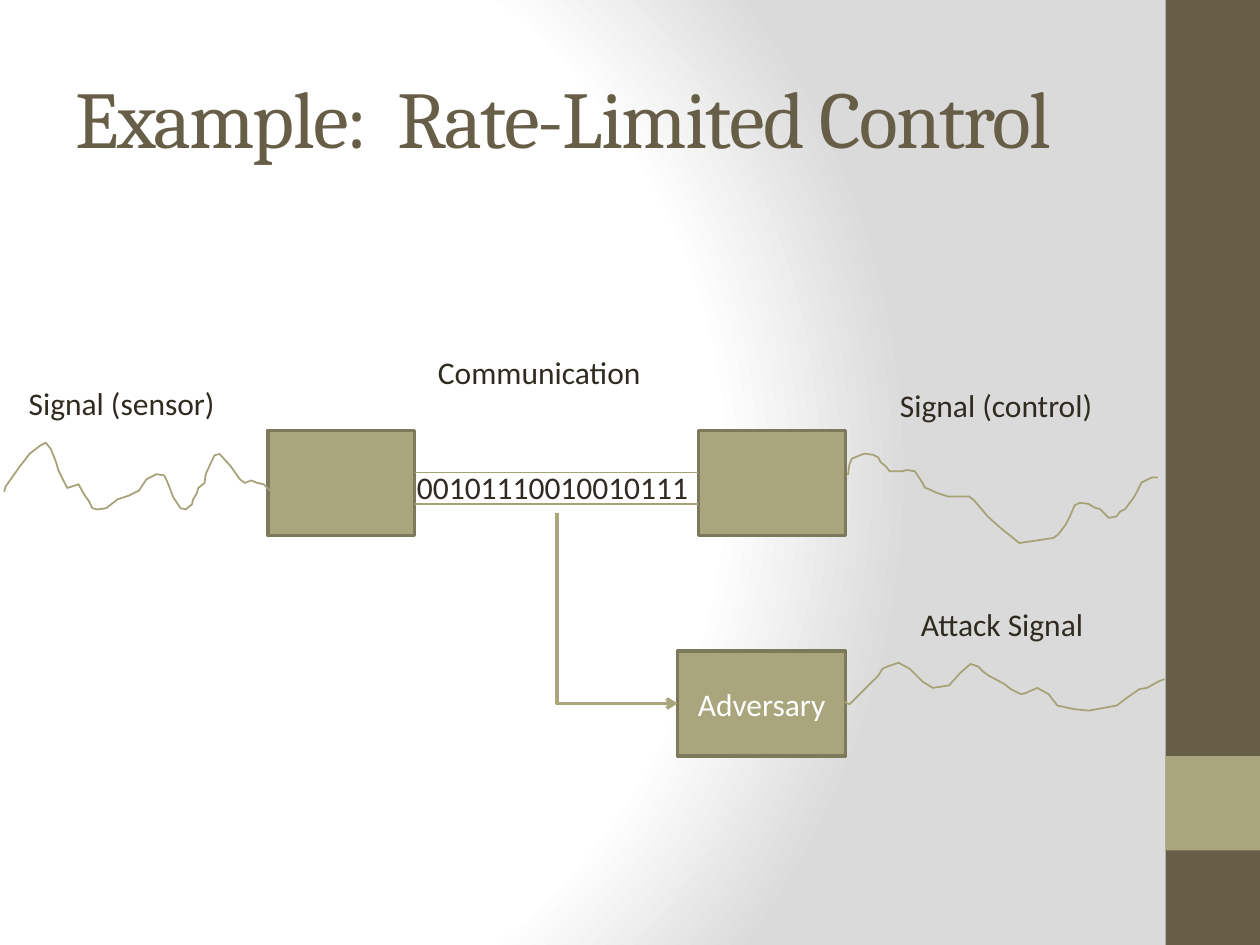
from typing import NamedTuple

from lxml import etree
from pptx import Presentation
from pptx.dml.color import RGBColor
from pptx.enum import shapes, text
from pptx.oxml import ns, parse_xml
from pptx.util import Pt

COLORS = {
    "bar": "675E47", "accent": "A9A57C", "edge": "7D7A5C", "wave": "A6A278",
    "ink": "2F2B20", "white": "FFFFFF", "gray": "DADADA",
}
SENSOR_WAVE = [
    (0, 39), (1, 35), (13, 18), (17, 13), (20, 9), (29, 2), (33, 0), (37, 5),
    (39, 10), (41, 15), (43, 22), (46, 28), (50, 36), (59, 33), (64, 42),
    (67, 46), (70, 52), (74, 53), (81, 52), (86, 48), (90, 45), (99, 42),
    (103, 40), (107, 38), (113, 29), (121, 25), (127, 26), (129, 30),
    (131, 35), (134, 43), (140, 52), (144, 53), (149, 49), (150, 45),
    (153, 40), (154, 36), (159, 32), (160, 25), (164, 16), (167, 10),
    (171, 9), (180, 19), (187, 29), (191, 32), (196, 30), (201, 32),
    (206, 33), (211, 38),
]
CONTROL_WAVE = [
    (0, 17), (1, 9), (3, 4), (13, 0), (20, 1), (24, 3), (26, 7), (30, 10),
    (33, 14), (43, 14), (47, 13), (53, 14), (59, 23), (61, 27), (66, 29),
    (70, 31), (79, 34), (96, 34), (100, 37), (111, 50), (121, 59), (136, 71),
    (163, 67), (167, 64), (173, 56), (176, 50), (180, 41), (184, 39),
    (191, 40), (196, 43), (200, 44), (207, 51), (213, 50), (216, 46),
    (220, 44), (226, 36), (229, 31), (233, 23), (241, 19), (246, 19),
]
ATTACK_WAVE = [
    (0, 31), (4, 33), (23, 14), (27, 10), (30, 5), (34, 3), (43, 0), (52, 5),
    (57, 10), (62, 15), (70, 20), (83, 18), (92, 8), (100, 1), (106, 3),
    (110, 7), (114, 10), (127, 17), (132, 21), (140, 25), (144, 24),
    (153, 20), (162, 25), (169, 34), (183, 37), (194, 38), (216, 34),
    (224, 28), (234, 21), (240, 20), (249, 15), (254, 13),
]
WAVE_UNIT = 0.72


class Box(NamedTuple):
    left: float
    top: float
    width: float
    height: float

    def inner(self, left, top, width, height):
        return Box(self.left + left, self.top + top, width, height)


def color(name):
    return RGBColor.from_string(COLORS[name])


def style_line(line, name, width):
    line.color.rgb = color(name)
    line.width = Pt(width)


def write(shape, words, size, font, name):
    para = shape.text_frame.paragraphs[0]
    para.text = words
    span = para.runs[0]
    span.font.size = Pt(size)
    span.font.name = font
    span.font.color.rgb = color(name)
    return span


def add_block(page, box, fill, edge=None):
    block = page.shapes.add_shape(shapes.MSO_SHAPE.RECTANGLE, *map(Pt, box))
    block.shadow.inherit = False
    block.fill.solid()
    block.fill.fore_color.rgb = color(fill)
    if edge:
        style_line(block.line, edge, 2)
    else:
        block.line.fill.background()
    return block


def add_label(page, box, words):
    label = page.shapes.add_textbox(*map(Pt, box))
    label.text_frame.word_wrap = False
    label.text_frame.auto_size = text.MSO_AUTO_SIZE.SHAPE_TO_FIT_TEXT
    write(label, words, 18, "Calibri", "ink")


def add_line(page, kind, start, end, name, width):
    line = page.shapes.add_connector(kind, *map(Pt, (*start, *end)))
    style_line(line.line, name, width)
    etree.SubElement(line._element.spPr, ns.qn("a:effectLst"))
    return line


def draw_wave(page, box, points):
    start, *rest = points
    builder = page.shapes.build_freeform(*start, scale=Pt(WAVE_UNIT))
    builder.add_line_segments(rest, close=False)
    wave = builder.convert_to_shape(Pt(box.left), Pt(box.top))
    wave.shadow.inherit = False
    wave.fill.background()
    style_line(wave.line, "wave", 1)


def draw_tap(page, box):
    tap = add_line(page, shapes.MSO_CONNECTOR.ELBOW, (box.left, box.top),
                   (box.left + box.width, box.top + box.height), "accent", 2)
    tap.left = Pt(box.left + (box.width - box.height) / 2)
    tap.top = Pt(box.top + (box.height - box.width) / 2)
    tap.width, tap.height = Pt(box.height), Pt(box.width)
    properties = tap._element.spPr
    frame = properties.find(ns.qn("a:xfrm"))
    frame.set("rot", "16200000")
    frame.set("flipH", "1")
    properties.find(ns.qn("a:prstGeom")).set("prst", "bentConnector2")
    outline = properties.find(ns.qn("a:ln"))
    etree.SubElement(outline, ns.qn("a:tailEnd"), type="arrow")


def draw_background(page):
    page.background.fill.solid()
    properties = page.background._cSld.bg.bgPr
    stops = "".join(
        f'<a:gs pos="{place}"><a:srgbClr val="{COLORS[name]}"/></a:gs>'
        for place, name in ((0, "white"), (75000, "white"), (100000, "gray")))
    gradient = parse_xml(
        f'<a:gradFill {ns.nsdecls("a")} rotWithShape="1"><a:gsLst>{stops}</a:gsLst>'
        '<a:path path="circle"><a:fillToRect l="20000" t="50000" r="100000" '
        'b="50000"/></a:path></a:gradFill>')
    properties.replace(properties.find(ns.qn("a:solidFill")), gradient)


def draw_sidebar(page, box):
    add_block(page, box, "bar")
    add_block(page, box.inner(0, 432, box.width, box.width), "accent")


def draw_title(page, box):
    title = page.shapes.add_textbox(*map(Pt, box))
    title.text_frame.word_wrap = True
    title.text_frame.vertical_anchor = text.MSO_ANCHOR.MIDDLE
    span = write(title, "Example:  Rate-Limited Control", 46, "Cambria", "bar")
    span.font._element.set("spc", "-100")


def draw_diagram(page, box):
    for left in (153, 399.2):
        add_block(page, box.inner(left, 48, 84, 60), "accent", "edge")
    adversary = add_block(page, box.inner(387.2, 174, 96, 60), "accent", "edge")
    adversary.text_frame.vertical_anchor = text.MSO_ANCHOR.MIDDLE
    write(adversary, "Adversary", 18, "Calibri", "white")
    adversary.text_frame.paragraphs[0].alignment = text.PP_ALIGN.CENTER

    for left, top, points in ((2.4, 55, SENSOR_WAVE),
                              (484.6, 61.2, CONTROL_WAVE),
                              (482.6, 180.7, ATTACK_WAVE)):
        draw_wave(page, box.inner(left, top, 0, 0), points)

    for top in (72, 90):
        start = box.inner(237, top, 0, 0)
        add_line(page, shapes.MSO_CONNECTOR.STRAIGHT, start[:2],
                 (start.left + 162, start.top), "wave", 1)
    draw_tap(page, box.inner(318.2, 95, 69, 109))

    for left, top, width, words in (
            (231.2, 66, 173.5, "00101110010010111"),
            (9.3, 18, 134.6, "Signal (sensor)"),
            (243.2, 0, 144, "Communication"),
            (507.2, 19, 139.7, "Signal (control)"),
            (519.2, 144, 121, "Attack Signal")):
        add_label(page, box.inner(left, top, width, 29), words)


def main():
    deck = Presentation()
    deck.slide_width, deck.slide_height = Pt(720), Pt(540)
    page = deck.slides.add_slide(deck.slide_layouts[6])
    draw_background(page)
    draw_sidebar(page, Box(666, 0, 54, 540))
    draw_title(page, Box(36, 21.6, 600, 90))
    draw_diagram(page, Box(0, 198, 666, 234))
    deck.save("out.pptx")


if __name__ == "__main__":
    main()
